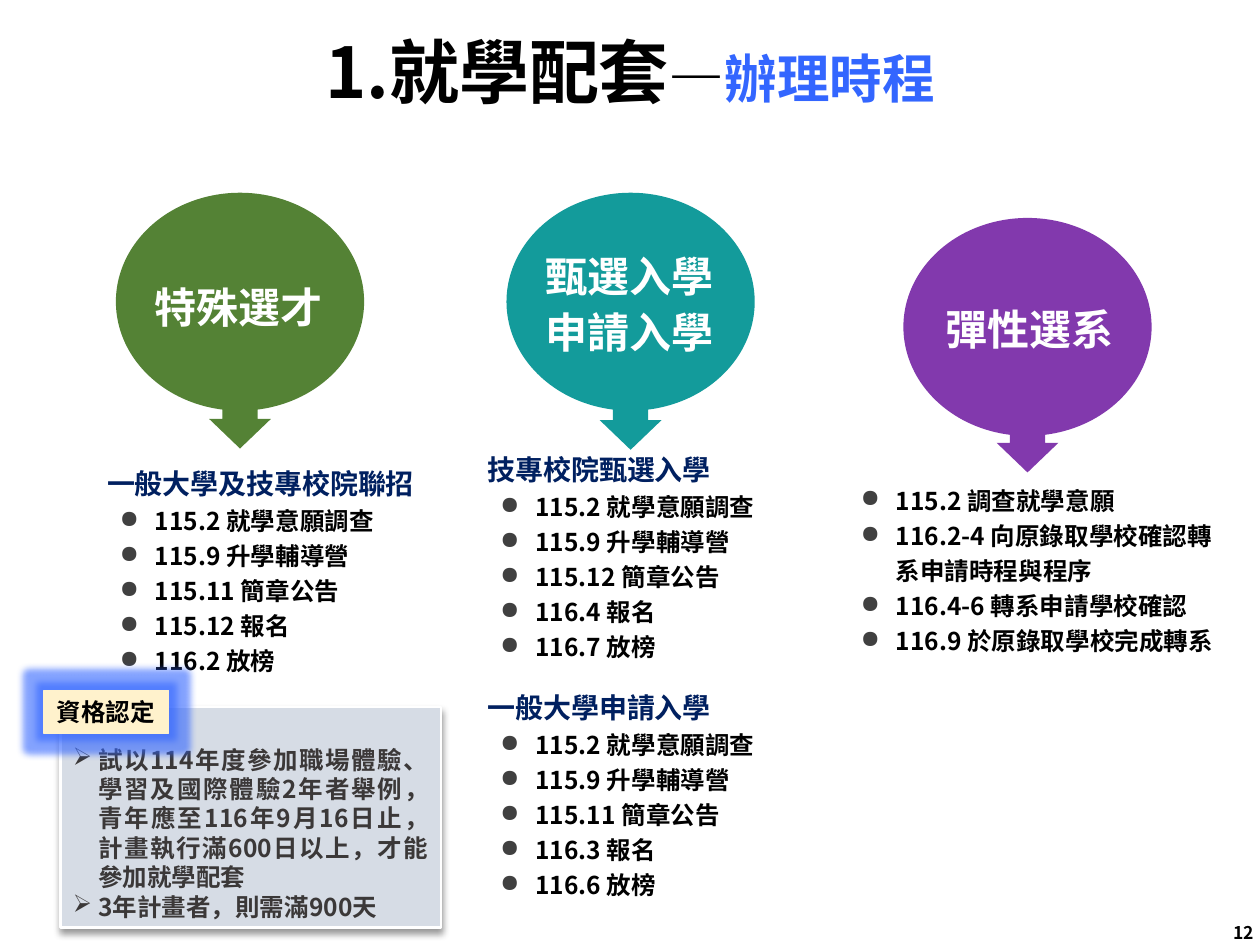
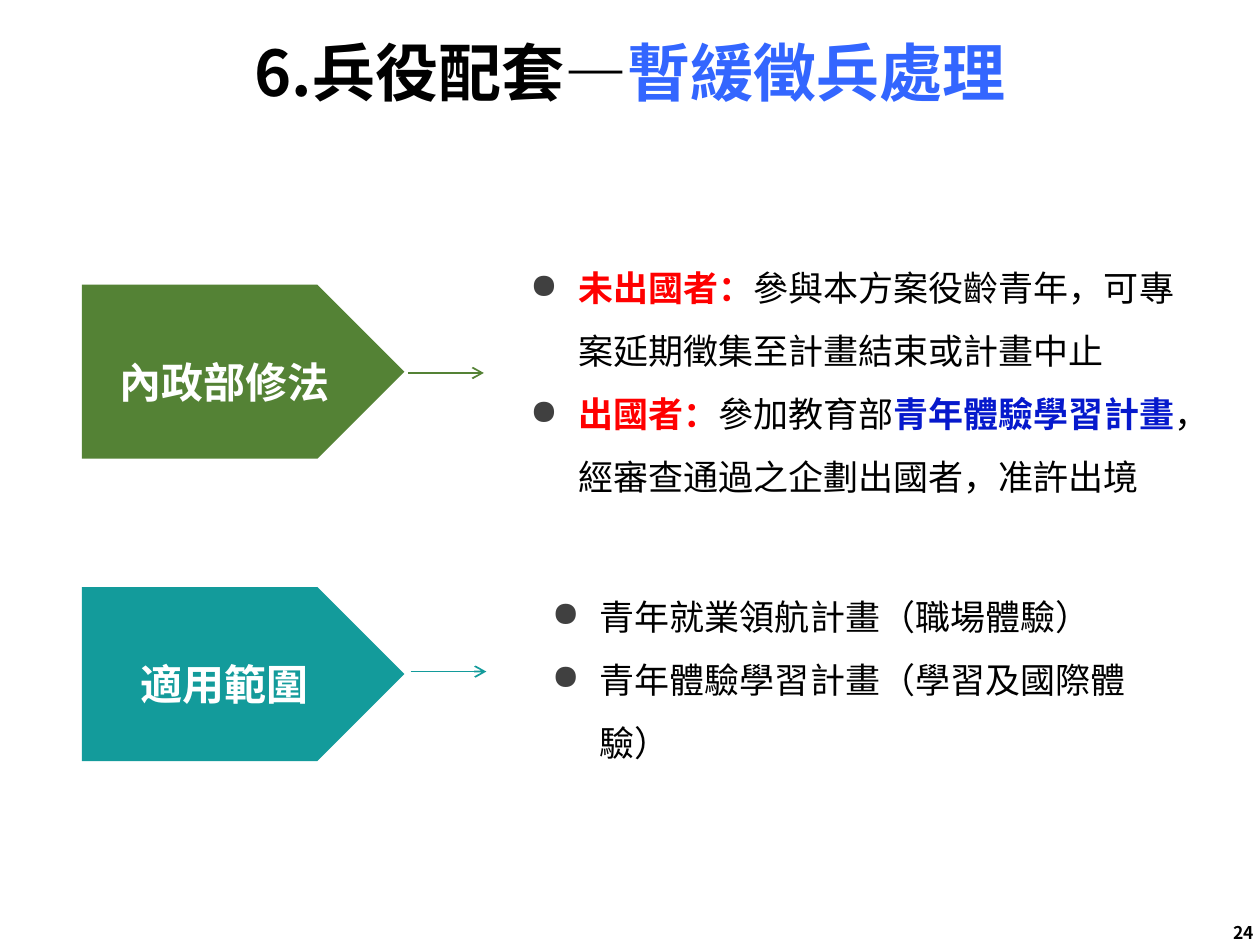
from lxml import etree
from pptx import Presentation
from pptx import util as u
from pptx.dml.color import RGBColor
from pptx.enum import shapes, text
from pptx.oxml import ns

PX = u.Inches(1) // 100
FONT = "Noto Sans CJK SC"
COLORS = {
    "black": "000000", "white": "FFFFFF", "blue": "3366FF", "navy": "002060",
    "bullet": "404040", "green": "548235", "teal": "139B9B", "purple": "8239AD",
    "red": "FF0000", "royal": "0619CC", "note": "D6DCE5", "note_text": "3B3838",
    "tag": "FFF2CC",
}
ALIGN = text.PP_ALIGN
ANCHOR = text.MSO_ANCHOR
SHAPE = shapes.MSO_SHAPE

# Content -------------------------------------------------------------------
TITLE_FRAME = (69, 15, 862, 91)
NUMBER_FRAME = (780, 720, 225, 40)
BALLOON_SIZE = (197, 173)
ARROW_SIZE = (49, 47)
PLATE_SIZE = (256, 138)
PLATE_LEFT = 65

SCHEDULE_TITLE = [("1.就學配套", {"size": 40}), ("—", {"size": 32}),
                  ("辦理時程", {"size": 30, "color": "blue"})]
MILITARY_TITLE = [("6.兵役配套—", {}), ("暫緩徵兵處理", {"color": "blue"})]

# Each group of dates is (heading, [(date, event), ...]).
CHANNELS = [
    {"color": "green", "balloon": (92, 153), "arrow_top": 309,
     "names": ["特殊選才"], "names_frame": (67, 216, 245, 51),
     "dates_frame": (72, 367, 276, 308), "inset": 13,
     "groups": [("一般大學及技專校院聯招", [
         ("115.2", "就學意願調查"), ("115.9", "升學輔導營"), ("115.11", "簡章公告"),
         ("115.12", "報名"), ("116.2", "放榜")])]},
    {"color": "teal", "balloon": (402, 153), "arrow_top": 310,
     "names": ["甄選入學", "申請入學"], "names_frame": (397, 191, 205, 96),
     "dates_frame": (363, 356, 276, 311), "inset": 24,
     "groups": [
         ("技專校院甄選入學", [
             ("115.2", "就學意願調查"), ("115.9", "升學輔導營"), ("115.12", "簡章公告"),
             ("116.4", "報名"), ("116.7", "放榜")]),
         ("一般大學申請入學", [
             ("115.2", "就學意願調查"), ("115.9", "升學輔導營"), ("115.11", "簡章公告"),
             ("116.3", "報名"), ("116.6", "放榜")])]},
    {"color": "purple", "balloon": (717, 173), "arrow_top": 328,
     "names": ["彈性選系"], "names_frame": (714, 233, 206, 51),
     "dates_frame": (657, 376, 316, 146), "inset": 16,
     "groups": [(None, [
         ("115.2", "調查就學意願"), ("116.2-4", "向原錄取學校確認轉系申請時程與程序"),
         ("116.4-6", "轉系申請學校確認"), ("116.9", "於原錄取學校完成轉系")])]},
]
NOTE_TAG = "資格認定"
NOTES = [
    "試以114年度參加職場體驗、學習及國際體驗2年者舉例，青年應至116年9月16日止，"
    "計畫執行滿600日以上，才能參加就學配套",
    "3年計畫者，則需滿900天",
]

RED = {"color": "red", "bold": True}
MEASURES = [
    {"color": "green", "top": 226, "name": "內政部修法", "arrow": (324, 296),
     "frame": (411, 192, 536, 206), "inset": 10,
     "points": [
         [("未出國者：", RED),
          ("參與本方案役齡青年，可專案延期徵集至計畫結束或計畫中止", {})],
         [("出國者：", RED), ("參加教育部", {}),
          ("青年體驗學習計畫", {"color": "royal", "bold": True}),
          ("，經審查通過之企劃出國者，准許出境", {})]]},
    {"color": "teal", "top": 466, "name": "適用範圍", "arrow": (326, 533),
     "frame": (407, 479, 518, 104), "inset": 31,
     "points": ["青年就業領航計畫（職場體驗）", "青年體驗學習計畫（學習及國際體驗）"]},
]


# Helpers -------------------------------------------------------------------
def rgb(name):
    return RGBColor.from_string(COLORS[name])


def scaled(frame):
    return [value * PX for value in frame]


def add_xml(parent, tag, **attributes):
    return etree.SubElement(parent, ns.qn(tag), attributes)


def add_box(page, frame, anchor=ANCHOR.TOP, inset=10):
    box = page.shapes.add_textbox(*scaled(frame))
    box.text_frame.word_wrap = True
    box.text_frame.vertical_anchor = anchor
    box.text_frame.margin_left = inset * PX
    return box


def add_figure(page, kind, frame, fill, line=None, width=1):
    figure = page.shapes.add_shape(kind, *scaled(frame))
    figure.shadow.inherit = False
    figure.fill.solid()
    figure.fill.fore_color.rgb = rgb(fill)
    if line:
        figure.line.color.rgb = rgb(line)
        figure.line.width = u.Pt(width)
    else:
        figure.line.fill.background()
    return figure


def add_effect(figure, tag, color, alpha, **attributes):
    """Put a glow or shadow into the effect list of a figure."""
    effects = figure._element.spPr.find(ns.qn("a:effectLst"))
    effect = add_xml(effects, tag, **attributes)
    shade = add_xml(effect, "a:srgbClr", val=COLORS[color])
    add_xml(shade, "a:alpha", val=str(alpha * 1000))


def write(box, content, size=14, color="black", bold=True, align=ALIGN.LEFT,
          spacing=None, before=0, bullet=None, bullet_color=None, left=0, hang=0):
    """Add one paragraph; content is a string or a list of (text, format) spans."""
    frame = box.text_frame
    para = frame.paragraphs[0]
    if para.runs:
        para = frame.add_paragraph()
    if bullet:
        props = para._p.get_or_add_pPr()
        props.set("marL", str(left * PX))
        props.set("indent", str(-hang * PX))
        if bullet_color:
            add_xml(add_xml(props, "a:buClr"), "a:srgbClr", val=COLORS[bullet_color])
        add_xml(props, "a:buChar", char=bullet)
    para.alignment = align
    if spacing:
        para.line_spacing = spacing
    if before:
        para.space_before = u.Pt(before)
    spans = [(content, {})] if isinstance(content, str) else content
    for words, own in spans:
        span = para.add_run()
        span.text = words
        span.font.name = FONT
        span.font.size = u.Pt(own.get("size", size))
        span.font.bold = own.get("bold", bold)
        span.font.color.rgb = rgb(own.get("color", color))
        add_xml(span.font._element, "a:ea", typeface=FONT)


def add_page(deck, title, number, size):
    page = deck.slides.add_slide(deck.slide_layouts[6])
    write(add_box(page, TITLE_FRAME, ANCHOR.MIDDLE), title, size=size,
          align=ALIGN.CENTER, spacing=0.9)
    write(add_box(page, NUMBER_FRAME, ANCHOR.MIDDLE), str(number), size=10,
          align=ALIGN.RIGHT)
    return page


# Slides --------------------------------------------------------------------
def add_channel(page, channel):
    left, top = channel["balloon"]
    color = channel["color"]
    add_figure(page, SHAPE.OVAL, (left, top, *BALLOON_SIZE), color)
    arrow_left = left + (BALLOON_SIZE[0] - ARROW_SIZE[0]) // 2
    arrow = add_figure(page, SHAPE.DOWN_ARROW,
                       (arrow_left, channel["arrow_top"], *ARROW_SIZE), color)
    arrow.adjustments[0] = 0.57
    names = add_box(page, channel["names_frame"], ANCHOR.MIDDLE)
    for name in channel["names"]:
        write(names, name, size=24, color="white", align=ALIGN.CENTER, spacing=1.1)

    dates = add_box(page, channel["dates_frame"], inset=channel["inset"])
    for index, (heading, events) in enumerate(channel["groups"]):
        if heading:
            write(dates, heading, size=16, color="navy", spacing=u.Pt(18),
                  before=18 if index else 0)
        for date, event in events:
            write(dates, f"{date} {event}", spacing=u.Pt(20), bullet="●",
                  bullet_color="bullet", left=38, hang=28)


def add_note(page):
    note = add_figure(page, SHAPE.RECTANGLE, (48, 561, 302, 175), "note", "white", 1.5)
    add_effect(note, "a:outerShdw", "black", 40, blurRad=str(u.Pt(4)),
               dist=str(u.Pt(3)), dir="5400000", algn="t", rotWithShape="0")
    note.text_frame.word_wrap = True
    note.text_frame.vertical_anchor = ANCHOR.BOTTOM
    for line in NOTES:
        write(note, line, color="note_text", align=ALIGN.JUSTIFY, bullet="➢",
              left=20, hang=20)
    tag = add_figure(page, SHAPE.RECTANGLE, (35, 548, 99, 34), "tag", "tag", 0.75)
    add_effect(tag, "a:glow", "blue", 60, rad=str(u.Pt(8)))
    tag.text_frame.word_wrap = False
    write(tag, NOTE_TAG)


def add_measure(page, measure):
    color, top = measure["color"], measure["top"]
    add_figure(page, SHAPE.PENTAGON, (PLATE_LEFT, top, *PLATE_SIZE), color)
    name = add_box(page, (PLATE_LEFT, top + 36, 227, 67))
    write(name, measure["name"], size=24, color="white", align=ALIGN.CENTER, spacing=1.4)

    x, y = measure["arrow"]
    arrow = page.shapes.add_connector(shapes.MSO_CONNECTOR.STRAIGHT,
                                      *scaled((x, y, x + 60, y)))
    arrow.line.color.rgb = rgb(color)
    arrow.line.width = u.Pt(1)
    add_xml(arrow.line._get_or_add_ln(), "a:tailEnd", type="arrow")
    add_xml(arrow._element.spPr, "a:effectLst")

    points = add_box(page, measure["frame"], ANCHOR.MIDDLE, measure["inset"])
    for point in measure["points"]:
        write(points, point, size=20, bold=False, spacing=1.5, bullet="●",
              bullet_color="bullet", left=38, hang=38)


def main():
    deck = Presentation()
    deck.slide_width, deck.slide_height = scaled((1000, 750))

    schedule = add_page(deck, SCHEDULE_TITLE, 12, 40)
    for channel in CHANNELS:
        add_channel(schedule, channel)
    add_note(schedule)

    military = add_page(deck, MILITARY_TITLE, 24, 36)
    for measure in MEASURES:
        add_measure(military, measure)

    deck.save("out.pptx")


if __name__ == "__main__":
    main()
